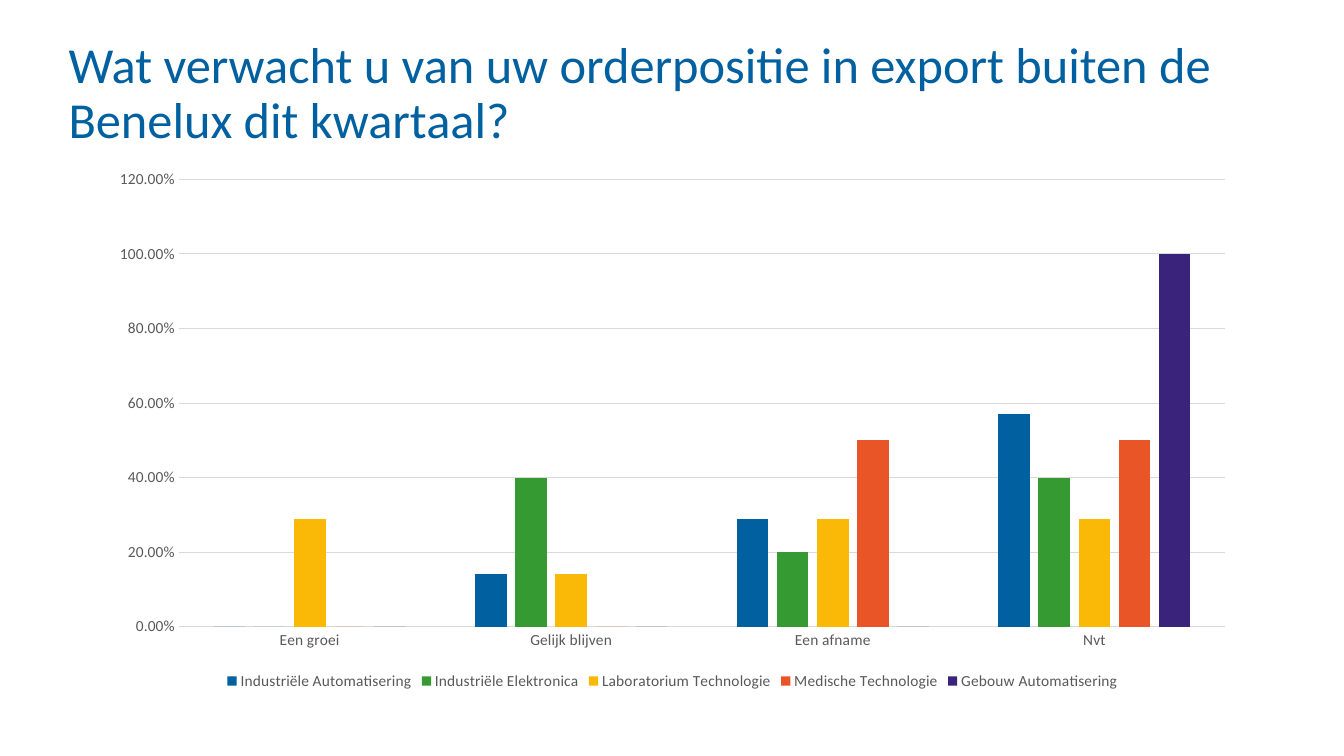
from pptx import Presentation
from pptx.chart.data import CategoryChartData
from pptx.dml.color import RGBColor
from pptx.enum.chart import XL_CHART_TYPE, XL_LEGEND_POSITION, XL_TICK_MARK
from pptx.enum.text import MSO_ANCHOR
from pptx.util import Inches, Pt

CLUSTERED = XL_CHART_TYPE.COLUMN_CLUSTERED
BOTTOM = XL_LEGEND_POSITION.BOTTOM
NO_TICK = XL_TICK_MARK.NONE
TOP = MSO_ANCHOR.TOP

BLUE = RGBColor(0x00, 0x60, 0xA0)
GREEN = RGBColor(0x35, 0x9A, 0x32)
YELLOW = RGBColor(0xFA, 0xB9, 0x07)
ORANGE = RGBColor(0xE9, 0x55, 0x27)
PURPLE = RGBColor(0x3A, 0x23, 0x7B)
LABEL_GREY = RGBColor(0x59, 0x59, 0x59)
LINE_GREY = RGBColor(0xD9, 0xD9, 0xD9)
FONT = "Calibri"

PAGE_WIDTH, PAGE_HEIGHT = 13.33, 7.5
TITLE_BOX = (0.68, 0.4, 11.91, 0.76)
CHART_BOX = (0.96, 1.58, 11.42, 5.31)

TITLE = "Wat verwacht u van uw orderpositie in export buiten de Benelux dit kwartaal?"
ANSWERS = ["Een groei", "Gelijk blijven", "Een afname", "Nvt"]
SECTORS = [
    ("Industriële Automatisering", BLUE, (0, 0.14, 0.29, 0.57)),
    ("Industriële Elektronica", GREEN, (0, 0.4, 0.2, 0.4)),
    ("Laboratorium Technologie", YELLOW, (0.29, 0.14, 0.29, 0.29)),
    ("Medische Technologie", ORANGE, (0, 0, 0.5, 0.5)),
    ("Gebouw Automatisering", PURPLE, (0, 0, 0, 1)),
]


def style_font(font, size, color):
    font.name = FONT
    font.size = Pt(size)
    font.bold = False
    font.color.rgb = color


def style_line(line):
    line.color.rgb = LINE_GREY
    line.width = Pt(0.75)


def add_text(page, box, text, size=36, color=BLUE, spacing=0.9):
    frame = page.shapes.add_textbox(*map(Inches, box)).text_frame
    frame.word_wrap = True
    frame.vertical_anchor = TOP
    frame.margin_left = frame.margin_right = 0
    frame.margin_top = frame.margin_bottom = 0
    para = frame.paragraphs[0]
    para.line_spacing = spacing
    span = para.add_run()
    span.text = text
    style_font(span.font, size, color)


def add_sector_chart(page, box):
    data = CategoryChartData(number_format="0.00%")
    data.categories = ANSWERS
    for name, _, values in SECTORS:
        data.add_series(name, values)
    chart = page.shapes.add_chart(CLUSTERED, *map(Inches, box), data).chart
    chart.has_title = False
    style_font(chart.font, 11, LABEL_GREY)

    # Columns
    plot = chart.plots[0]
    plot.vary_by_categories = False
    plot.gap_width = 219
    plot.overlap = -27
    for series, (_, color, _) in zip(plot.series, SECTORS):
        series.invert_if_negative = False
        series.format.fill.solid()
        series.format.fill.fore_color.rgb = color

    # Axes
    for axis in (chart.category_axis, chart.value_axis):
        axis.major_tick_mark = axis.minor_tick_mark = NO_TICK
        style_font(axis.tick_labels.font, 11, LABEL_GREY)
    style_line(chart.category_axis.format.line)
    value_axis = chart.value_axis
    value_axis.minimum_scale, value_axis.maximum_scale = 0, 1.2
    value_axis.major_unit = 0.2
    value_axis.format.line.fill.background()
    value_axis.has_major_gridlines = True
    style_line(value_axis.major_gridlines.format.line)
    value_axis.tick_labels.number_format = "0.00%"
    value_axis.tick_labels.number_format_is_linked = False

    # Legend
    chart.has_legend = True
    chart.legend.position = BOTTOM
    chart.legend.include_in_layout = False
    style_font(chart.legend.font, 11, LABEL_GREY)


def main():
    deck = Presentation()
    deck.slide_width, deck.slide_height = Inches(PAGE_WIDTH), Inches(PAGE_HEIGHT)
    page = deck.slides.add_slide(deck.slide_layouts[6])
    add_text(page, TITLE_BOX, TITLE)
    add_sector_chart(page, CHART_BOX)
    deck.save("out.pptx")


if __name__ == "__main__":
    main()
